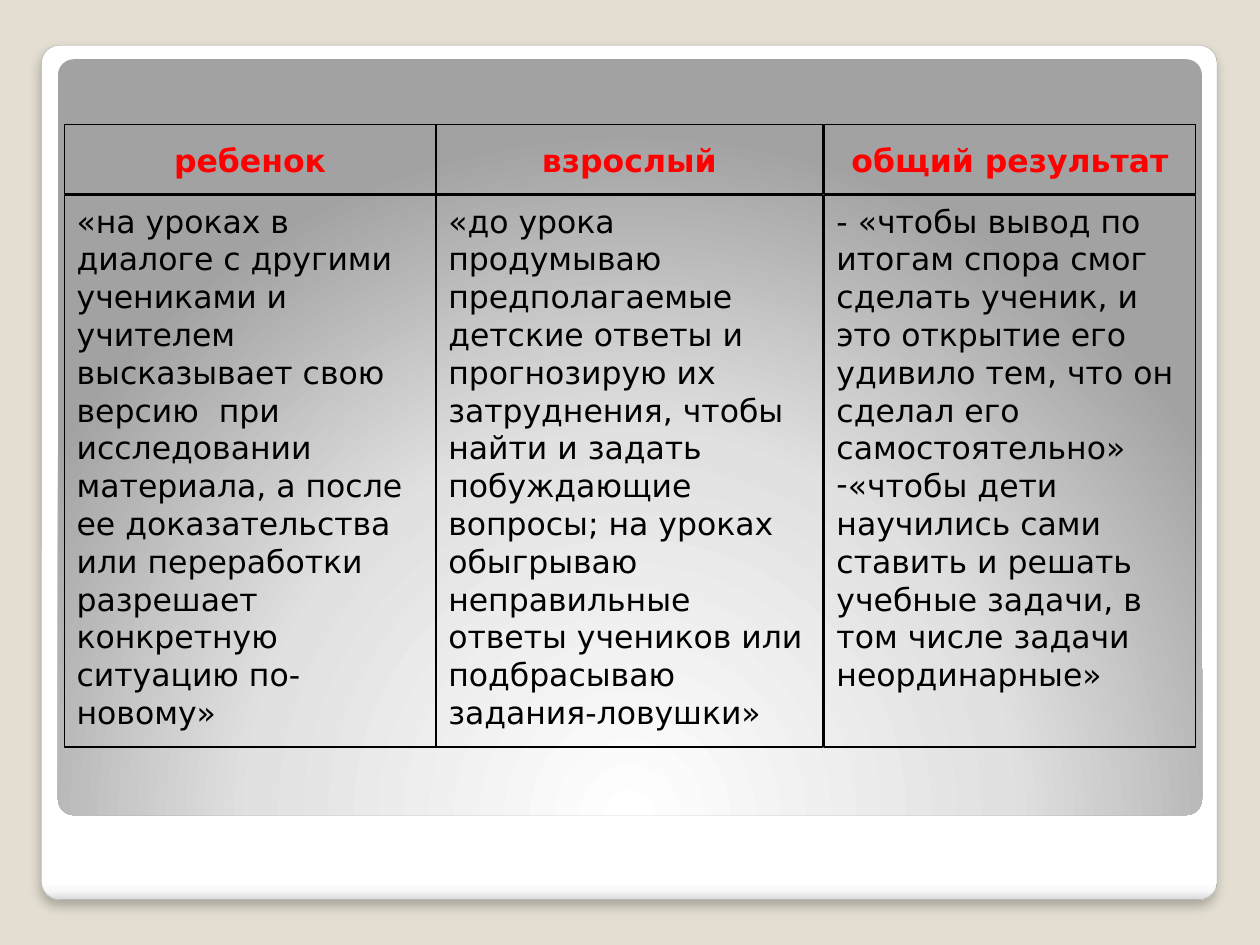
from lxml import etree
from pptx import Presentation
from pptx.dml.color import RGBColor
from pptx.enum import shapes, text
from pptx.oxml.ns import nsdecls
from pptx.util import Inches, Pt

# Content: heading and paragraphs of each column; "bullet" marks a dash item
HEADS = ["ребенок", "взрослый", "общий результат"]
BODIES = [
    [("plain", "«на уроках в диалоге с другими учениками и учителем высказывает "
      "свою версию  при исследовании материала, а после ее доказательства или "
      "переработки разрешает конкретную ситуацию по-новому»")],
    [("plain", "«до урока продумываю предполагаемые детские ответы и прогнозирую "
      "их затруднения, чтобы найти и задать побуждающие вопросы; на уроках "
      "обыгрываю неправильные ответы учеников или подбрасываю задания-ловушки»")],
    [("plain", "- «чтобы вывод по итогам спора смог сделать ученик, и это открытие "
      "его удивило тем, что он сделал его самостоятельно»"),
     ("bullet", "«чтобы дети научились сами ставить и решать учебные задачи, в том "
      "числе задачи неординарные»")],
]
# Grid: (start, length) of each column and row
COLS = [(0.51, 2.95), (3.46, 3.07), (6.54, 2.95)]
ROWS = [(0.99, 0.55), (1.55, 4.38)]

THEME = {
    "back": "E3DED1", "edge": "A4A4A4", "rule": "000000",
    "font": "DejaVu Sans", "rule_pt": 0.75, "lead": Pt(21.6),
    "head": {"size": Pt(18), "bold": True, "color": "FF0000",
             "align": text.PP_ALIGN.CENTER, "anchor": text.MSO_ANCHOR.MIDDLE},
    "body": {"size": Pt(18), "bold": False, "color": "000000",
             "align": text.PP_ALIGN.LEFT, "anchor": text.MSO_ANCHOR.TOP},
    "card": [(0, "FFFFFF"), (98, "FFFFFF"), (99, "F7F7F7"), (100, "DADADA")],
    "panel": [(0, "FFFFFF"), (55, "E1E1E1"), (100, "A2A2A2")],
}
DOWN = '<a:lin ang="5400000" scaled="0"/>'
GLOW = ('<a:path path="circle"><a:fillToRect l="50000" t="175000" '
        'r="50000" b="-75000"/></a:path>')


def node(xml):
    """Parse one drawing element, adding its namespace."""
    name, rest = xml.split(" ", 1)
    return etree.fromstring(f"{name} {nsdecls('a')} {rest}")


def shape_at(slide, kind, box):
    """Plain shape without shadow, fill or line."""
    shape = slide.shapes.add_shape(kind, *map(Inches, box))
    shape.shadow.inherit = False
    shape.fill.background()
    shape.line.fill.background()
    return shape


def stroke(shape, tone, width):
    shape.line.color.rgb = RGBColor.from_string(tone)
    shape.line.width = Pt(width)


def frame(slide, box, stops, way):
    """Rounded frame with a gradient fill."""
    shape = shape_at(slide, shapes.MSO_SHAPE.ROUNDED_RECTANGLE, box)
    shape.adjustments[0] = 0.021
    marks = "".join(f'<a:gs pos="{pos * 1000}"><a:srgbClr val="{tone}"/></a:gs>'
                    for pos, tone in stops)
    props = shape._element.spPr
    props.replace(props.find("{*}noFill"), node(
        f'<a:gradFill rotWithShape="1"><a:gsLst>{marks}</a:gsLst>{way}</a:gradFill>'))
    return shape


def write(shape, items, style):
    """Fill a cell with styled paragraphs."""
    body = shape.text_frame
    body.word_wrap = True
    body.vertical_anchor = style["anchor"]
    for spot, (kind, words) in enumerate(items):
        para = body.add_paragraph() if spot else body.paragraphs[0]
        para.alignment = style["align"]
        para.line_spacing = THEME["lead"]
        run = para.add_run()
        run.text = words
        run.font.name = THEME["font"]
        for key in ("size", "bold"):
            setattr(run.font, key, style[key])
        run.font.color.rgb = RGBColor.from_string(style["color"])
        if kind == "bullet":
            props = para._p.get_or_add_pPr()
            props.append(node(f'<a:buFont typeface="{THEME["font"]}"/>'))
            props.append(node('<a:buChar char="-"/>'))


def main():
    deck = Presentation()
    deck.slide_width, deck.slide_height = Inches(10), Inches(7.5)
    slide = deck.slides.add_slide(deck.slide_layouts[6])
    back = slide.background.fill
    back.solid()
    back.fore_color.rgb = RGBColor.from_string(THEME["back"])

    # White card with a soft shadow, then the grey panel
    card = frame(slide, (0.33, 0.36, 9.33, 6.78), THEME["card"], DOWN)
    stroke(card, THEME["edge"], 0.16)
    card._element.spPr.find("{*}effectLst").append(node(
        f'<a:outerShdw blurRad="{Pt(6)}" dist="{Pt(4)}" dir="5400000" '
        'algn="t" rotWithShape="0"><a:srgbClr val="000000">'
        '<a:alpha val="25000"/></a:srgbClr></a:outerShdw>'))
    frame(slide, (0.46, 0.47, 9.08, 6), THEME["panel"], GLOW)

    # Grid of outlined boxes: headings, then bodies
    heads = [[("plain", head)] for head in HEADS]
    for (top, high), line, style in zip(ROWS, (heads, BODIES), ("head", "body")):
        for (left, wide), items in zip(COLS, line):
            cell = shape_at(slide, shapes.MSO_SHAPE.RECTANGLE,
                            (left, top, wide, high))
            stroke(cell, THEME["rule"], THEME["rule_pt"])
            write(cell, items, THEME[style])

    deck.save("out.pptx")


if __name__ == "__main__":
    main()
